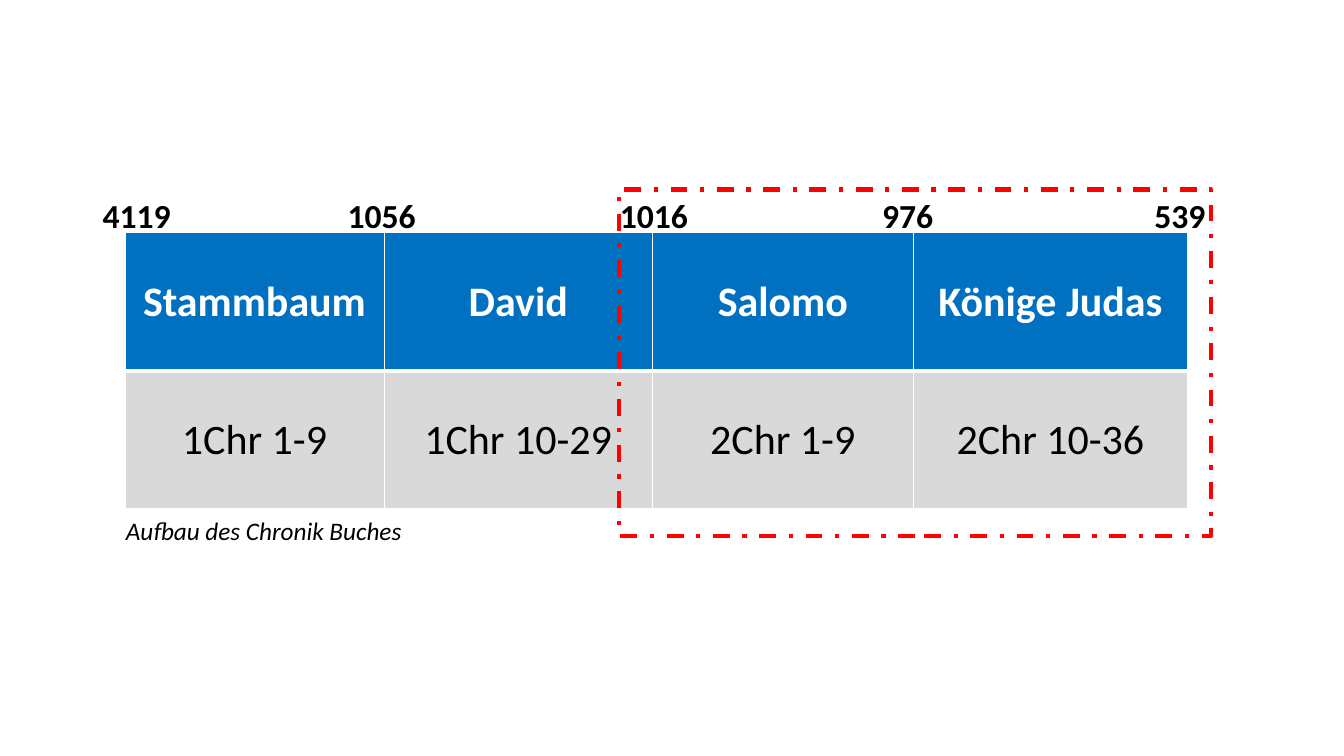
from dataclasses import dataclass

from lxml import etree
from pptx import Presentation
from pptx import util as u
from pptx.dml.color import RGBColor
from pptx.enum import dml, shapes, text
from pptx.oxml.ns import qn

EMU_PER_PX = 9144  # 100 px to the inch


@dataclass(frozen=True)
class Theme:
    font: str = "Calibri"
    header: str = "0070C0"
    body: str = "D9D9D9"
    white: str = "FFFFFF"
    black: str = "000000"
    highlight: str = "FF0000"
    cell_size: int = 30
    year_size: int = 24
    caption_size: int = 18


THEME = Theme()
SECTIONS = [
    ("Stammbaum", "1Chr 1-9"),
    ("David", "1Chr 10-29"),
    ("Salomo", "2Chr 1-9"),
    ("Könige Judas", "2Chr 10-36"),
]
COLUMN_WIDTHS = [257, 266, 259, 272]
ROW_HEIGHT = 137
YEARS = ["4119", "1056", "1016", "976", "539"]
YEAR_STOPS = [243, 513, 773, 1043]


def px(length):
    return u.Emu(length * EMU_PER_PX)


def box(*lengths):
    return [px(length) for length in lengths]


def style_runs(paragraph, size, color, bold=False, italic=False):
    for run in paragraph.runs:
        font = run.font
        font.name, font.size = THEME.font, u.Pt(size)
        font.bold, font.italic = bold, italic
        font.color.rgb = RGBColor.from_string(color)


def add_border(cell, side, width):
    line = etree.SubElement(cell._tc.get_or_add_tcPr(), qn(f"a:ln{side}"), w=str(u.Pt(width)))
    fill = etree.SubElement(line, qn("a:solidFill"))
    etree.SubElement(fill, qn("a:srgbClr"), val=THEME.white)


def format_cell(cell, content, is_header):
    cell.text = content
    cell.vertical_anchor = text.MSO_ANCHOR.MIDDLE
    cell.margin_left = cell.margin_right = px(14)
    cell.margin_top = cell.margin_bottom = 0
    for side in "LRTB":
        between_rows = side == ("B" if is_header else "T")
        add_border(cell, side, 3 if between_rows else 1)
    cell.fill.solid()
    cell.fill.fore_color.rgb = RGBColor.from_string(THEME.header if is_header else THEME.body)
    paragraph = cell.text_frame.paragraphs[0]
    paragraph.alignment = text.PP_ALIGN.CENTER
    style_runs(paragraph, THEME.cell_size, THEME.white if is_header else THEME.black, bold=is_header)


def add_sections_table(slide):
    rows = list(zip(*SECTIONS))
    frame = slide.shapes.add_table(
        len(rows), len(SECTIONS), *box(124, 231, sum(COLUMN_WIDTHS), ROW_HEIGHT * len(rows))
    )
    table = frame.table
    for column, width in zip(table.columns, COLUMN_WIDTHS):
        column.width = px(width)
    for row_index, contents in enumerate(rows):
        table.rows[row_index].height = px(ROW_HEIGHT)
        for column_index, content in enumerate(contents):
            format_cell(table.cell(row_index, column_index), content, row_index == 0)


def add_text(slide, position, content, size, wrap=True, stops=(), **style):
    """Add a one-line text box; stops are tab positions in px from the text edge."""
    frame = slide.shapes.add_textbox(*box(*position)).text_frame
    frame.word_wrap = wrap
    frame.vertical_anchor = text.MSO_ANCHOR.MIDDLE if stops else text.MSO_ANCHOR.TOP
    paragraph = frame.paragraphs[0]
    paragraph.text = content
    if stops:
        tabs = etree.SubElement(paragraph._p.get_or_add_pPr(), qn("a:tabLst"))
        for stop in stops:
            etree.SubElement(tabs, qn("a:tab"), pos=str(px(stop)), algn="l")
    style_runs(paragraph, size, THEME.black, **style)


def add_highlight(slide, position):
    frame = slide.shapes.add_shape(shapes.MSO_SHAPE.RECTANGLE, *box(*position))
    frame.shadow.inherit = False
    frame.fill.background()
    frame.line.color.rgb = RGBColor.from_string(THEME.highlight)
    frame.line.width = u.Pt(3)
    frame.line.dash_style = dml.MSO_LINE.DASH_DOT


def main():
    presentation = Presentation()
    presentation.slide_width, presentation.slide_height = box(1333, 750)
    slide = presentation.slides.add_slide(presentation.slide_layouts[6])
    add_sections_table(slide)
    add_text(slide, (115, 506, 296, 40), "Aufbau des Chronik Buches", THEME.caption_size,
             wrap=False, italic=True)
    add_text(slide, (92, 188, 1228, 50), "\t".join(YEARS), THEME.year_size,
             stops=YEAR_STOPS, bold=True)
    add_highlight(slide, (614, 188, 587, 344))
    presentation.save("out.pptx")


if __name__ == "__main__":
    main()
